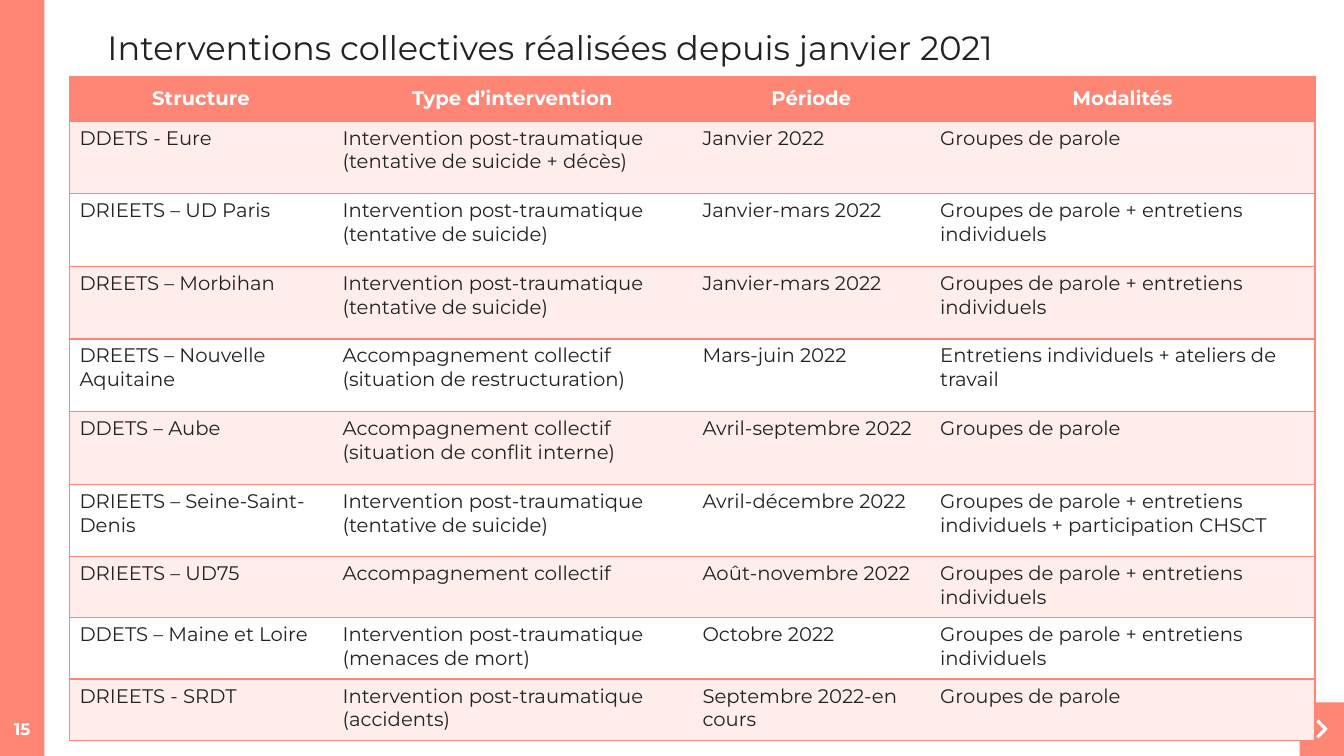
from lxml import etree
from pptx import Presentation
from pptx.dml.color import RGBColor
from pptx.enum import shapes, text
from pptx.oxml import ns
from pptx.util import Cm, Pt

# Content
TITLE = "Interventions collectives réalisées depuis janvier 2021"
PAGE = "15"
HEADER = ("Structure", "Type d’intervention", "Période", "Modalités")
POST = "Intervention post-traumatique"
SUPPORT = "Accompagnement collectif"
GROUPS = "Groupes de parole"
MIXED = GROUPS + " + entretiens individuels"
ROWS = [
    ("DDETS - Eure", POST + " (tentative de suicide + décès)", "Janvier 2022", GROUPS),
    ("DRIEETS – UD Paris", POST + " (tentative de suicide)", "Janvier-mars 2022", MIXED),
    ("DREETS – Morbihan", POST + " (tentative de suicide)", "Janvier-mars 2022", MIXED),
    ("DREETS – Nouvelle Aquitaine", SUPPORT + " (situation de restructuration)",
     "Mars-juin 2022", "Entretiens individuels + ateliers de travail"),
    ("DDETS – Aube", SUPPORT + " (situation de conflit interne)",
     "Avril-septembre 2022", GROUPS),
    ("DRIEETS – Seine-Saint-Denis", POST + " (tentative de suicide)",
     "Avril-décembre 2022", MIXED + " + participation CHSCT"),
    ("DRIEETS – UD75", SUPPORT, "Août-novembre 2022", MIXED),
    ("DDETS – Maine et Loire", POST + " (menaces de mort)", "Octobre 2022", MIXED),
    ("DRIEETS - SRDT", POST + " (accidents)", "Septembre 2022-en cours", GROUPS),
]

# Theme and measures (cm)
THEME = {
    "font": "Montserrat", "coral": "FF8575", "pale": "FFEDEC", "white": "FFFFFF",
    "ink": "222222", "title": 24, "body": 14, "page": 12, "line": 1,
}
SLIDE_W, SLIDE_H = 33.87, 19.05
BAR_W = 1.12
CORNER_H = 1.35
TABLE_X, TABLE_Y = 1.75, 1.93
COL_W = (6.63, 9.07, 5.99, 9.7)
ROW_H = [1.12] + [1.83] * 6 + [1.54] * 3
CHEVRON = [(33.17, 18.19), (33.35, 18.37), (33.17, 18.55),
           (33.23, 18.61), (33.46, 18.37), (33.23, 18.13)]


def color(name):
    return RGBColor.from_string(THEME[name])


def write(tf, words, size, ink, bold=False, align=text.PP_ALIGN.LEFT):
    p = tf.paragraphs[0]
    p.alignment = align
    r = p.add_run()
    r.text = words
    for key, value in {"name": THEME["font"], "size": Pt(THEME[size]), "bold": bold}.items():
        setattr(r.font, key, value)
    r.font.color.rgb = color(ink)


def paint(sp, fill):
    sp.shadow.inherit = False
    sp.fill.solid()
    sp.fill.fore_color.rgb = color(fill)
    sp.line.fill.background()


def add_text(s, box, anchor, *args, **kwargs):
    tf = s.shapes.add_textbox(*map(Cm, box)).text_frame
    tf.word_wrap = True
    tf.vertical_anchor = anchor
    write(tf, *args, **kwargs)


def add_borders(cell, sides):
    tcPr = cell._tc.get_or_add_tcPr()
    for side in ("L", "R", "T", "B"):
        ln = etree.SubElement(tcPr, ns.qn("a:ln" + side), w=str(Pt(THEME["line"])))
        if side in sides:
            fill = etree.SubElement(ln, ns.qn("a:solidFill"))
            etree.SubElement(fill, ns.qn("a:srgbClr"), val=THEME["coral"])
        else:
            etree.SubElement(ln, ns.qn("a:noFill"))


def add_table(s):
    rows = [HEADER] + ROWS
    frame = s.shapes.add_table(len(rows), len(COL_W), Cm(TABLE_X), Cm(TABLE_Y),
                               Cm(sum(COL_W)), Cm(sum(ROW_H)))
    table = frame.table
    table.first_row = table.horz_banding = False
    for column, width in zip(table.columns, COL_W):
        column.width = Cm(width)
    for i, (row, height) in enumerate(zip(rows, ROW_H)):
        table.rows[i].height = Cm(height)
        for j, words in enumerate(row):
            cell = table.cell(i, j)
            sides = "TB" + ("L" if j == 0 else "") + ("R" if j == len(row) - 1 else "")
            add_borders(cell, sides)
            cell.fill.solid()
            if i == 0:
                cell.fill.fore_color.rgb = color("coral")
                cell.vertical_anchor = text.MSO_ANCHOR.MIDDLE
                write(cell.text_frame, words, "body", "white", True, text.PP_ALIGN.CENTER)
            else:
                cell.fill.fore_color.rgb = color("pale" if i % 2 else "white")
                write(cell.text_frame, words, "body", "ink")


def main():
    prs = Presentation()
    prs.slide_width, prs.slide_height = Cm(SLIDE_W), Cm(SLIDE_H)
    s = prs.slides.add_slide(prs.slide_layouts[6])

    # Side bar and corner with its chevron
    for box in [(0, 0, BAR_W, SLIDE_H),
                (SLIDE_W - BAR_W, SLIDE_H - CORNER_H, BAR_W, CORNER_H)]:
        paint(s.shapes.add_shape(shapes.MSO_SHAPE.RECTANGLE, *map(Cm, box)), "coral")
    points = [(Cm(x), Cm(y)) for x, y in CHEVRON]
    outline = s.shapes.build_freeform(*points[0])
    outline.add_line_segments(points[1:], close=True)
    paint(outline.convert_to_shape(), "white")

    # Title and page number
    add_text(s, (2.46, 0.56, 29.06, 1.27), text.MSO_ANCHOR.TOP, TITLE, "title", "ink")
    add_text(s, (0, 17.86, BAR_W, 1.02), text.MSO_ANCHOR.MIDDLE, PAGE, "page", "white",
             bold=True, align=text.PP_ALIGN.CENTER)

    # Table of interventions
    add_table(s)
    prs.save("out.pptx")


if __name__ == "__main__":
    main()
